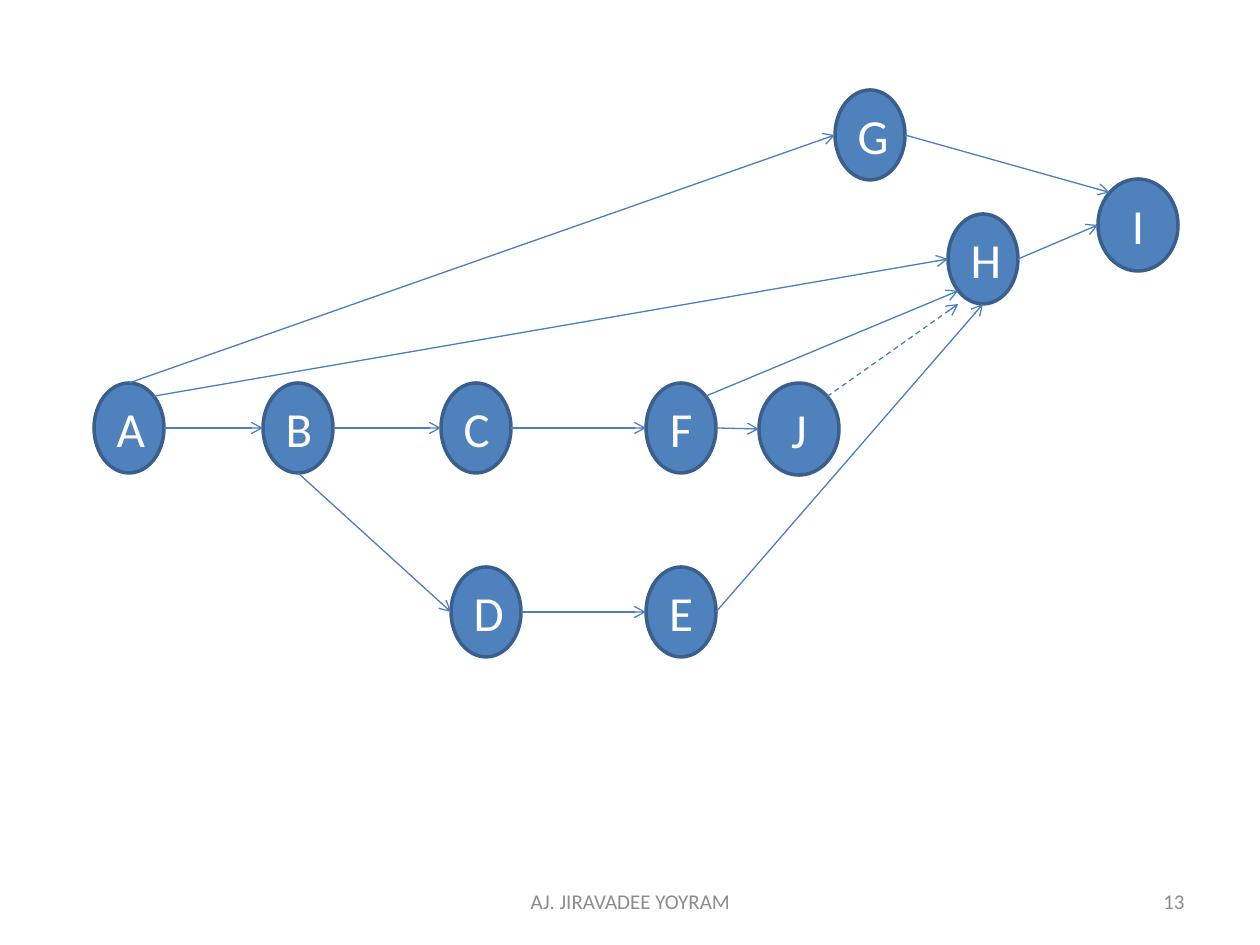
from dataclasses import dataclass
from math import cos, pi, sin

from lxml import etree
from pptx import Presentation
from pptx.dml.color import RGBColor
from pptx.enum.dml import MSO_LINE
from pptx.enum.shapes import MSO_CONNECTOR, MSO_SHAPE
from pptx.enum.text import MSO_ANCHOR, PP_ALIGN
from pptx.oxml.ns import qn
from pptx.util import Pt

STRAIGHT = MSO_CONNECTOR.STRAIGHT
OVAL = MSO_SHAPE.OVAL
DASH = MSO_LINE.DASH
MIDDLE = MSO_ANCHOR.MIDDLE
CENTER = PP_ALIGN.CENTER
RIGHT = PP_ALIGN.RIGHT

PX = 914400 / 126


@dataclass(frozen=True)
class Theme:
    font: str = "Calibri"
    node_fill: str = "4F81BD"
    node_line: str = "3A5F8C"
    node_text: str = "FFFFFF"
    arrow: str = "4B7EBC"
    footer_text: str = "8C8C8C"
    node_size: float = 28
    footer_size: float = 12
    node_line_width: float = 2
    arrow_width: float = 0.75


THEME = Theme()

SMALL = (70, 90)
LARGE = (80, 92)
MAIN_ROW = 293
LOWER_ROW = 477
ACTIVITIES = {
    "A": (0, MAIN_ROW, *SMALL),
    "B": (169, MAIN_ROW, *SMALL),
    "C": (347, MAIN_ROW, *SMALL),
    "D": (357, LOWER_ROW, *SMALL),
    "E": (552, LOWER_ROW, *SMALL),
    "F": (552, MAIN_ROW, *SMALL),
    "G": (741, 0, *SMALL),
    "H": (854, 124, *SMALL),
    "I": (1004, 89, *LARGE),
    "J": (665, MAIN_ROW, *LARGE),
}

TOP, TOP_LEFT, LEFT, BOTTOM_LEFT, BOTTOM, _, RIGHT_SIDE, TOP_RIGHT = range(8)
DEPENDENCIES = [
    ("A", RIGHT_SIDE, "B", LEFT),
    ("B", RIGHT_SIDE, "C", LEFT),
    ("B", BOTTOM, "D", LEFT),
    ("D", RIGHT_SIDE, "E", LEFT),
    ("C", RIGHT_SIDE, "F", LEFT),
    ("A", TOP, "G", LEFT),
    ("A", TOP_RIGHT, "H", LEFT),
    ("E", RIGHT_SIDE, "H", BOTTOM),
    ("F", TOP_RIGHT, "H", BOTTOM_LEFT),
    ("G", RIGHT_SIDE, "I", TOP_LEFT),
    ("H", RIGHT_SIDE, "I", LEFT),
    ("F", RIGHT_SIDE, "J", LEFT),
]


def emu(*lengths):
    return [round(length * PX) for length in lengths]


def write(shape, text, size, color, alignment):
    frame = shape.text_frame
    frame.word_wrap = True
    frame.vertical_anchor = MIDDLE
    paragraph = frame.paragraphs[0]
    paragraph.alignment = alignment
    run = paragraph.add_run()
    run.text = text
    run.font.name = THEME.font
    run.font.size = Pt(size)
    run.font.color.rgb = RGBColor.from_string(color)


def add_activity(slide, name, box):
    shape = slide.shapes.add_shape(OVAL, *emu(*box))
    shape.shadow.inherit = False
    shape.fill.solid()
    shape.fill.fore_color.rgb = RGBColor.from_string(THEME.node_fill)
    shape.line.color.rgb = RGBColor.from_string(THEME.node_line)
    shape.line.width = Pt(THEME.node_line_width)
    write(shape, name, THEME.node_size, THEME.node_text, CENTER)
    return shape


def site_point(shape, site):
    angle = site * pi / 4
    x = shape.left + shape.width / 2 * (1 - sin(angle))
    y = shape.top + shape.height / 2 * (1 - cos(angle))
    return round(x), round(y)


def add_arrow(slide, start, end, dash=None):
    connector = slide.shapes.add_connector(STRAIGHT, *start, *end)
    connector.line.color.rgb = RGBColor.from_string(THEME.arrow)
    connector.line.width = Pt(THEME.arrow_width)
    if dash:
        connector.line.dash_style = dash
    properties = connector._element.spPr
    etree.SubElement(properties.find(qn("a:ln")), qn("a:tailEnd"), type="arrow")
    etree.SubElement(properties, qn("a:effectLst"))
    return connector


def glue(connector, tag, shape, site):
    joints = connector._element.find(f"{qn('p:nvCxnSpPr')}/{qn('p:cNvCxnSpPr')}")
    etree.SubElement(joints, qn(tag), id=str(shape.shape_id), idx=str(site))


def add_network(slide, left, top):
    nodes = {
        name: add_activity(slide, name, (left + x, top + y, width, height))
        for name, (x, y, width, height) in ACTIVITIES.items()
    }
    for source, source_site, target, target_site in DEPENDENCIES:
        first, last = nodes[source], nodes[target]
        arrow = add_arrow(slide, site_point(first, source_site), site_point(last, target_site))
        glue(arrow, "a:stCxn", first, source_site)
        glue(arrow, "a:endCxn", last, target_site)

    corner_x = site_point(nodes["H"], BOTTOM_LEFT)[0]
    bottom_y = site_point(nodes["H"], BOTTOM)[1]
    dummy = add_arrow(slide, site_point(nodes["J"], TOP_RIGHT), (corner_x, bottom_y), DASH)
    glue(dummy, "a:stCxn", nodes["J"], TOP_RIGHT)


def add_footer(slide, left, top, width, height):
    number_width = 294
    entries = [
        ("AJ. JIRAVADEE YOYRAM", left, 399, CENTER),
        ("13", left + width - number_width, number_width, RIGHT),
    ]
    for text, x, text_width, alignment in entries:
        shape = slide.shapes.add_textbox(*emu(x, top, text_width, height))
        write(shape, text, THEME.footer_size, THEME.footer_text, alignment)


def main():
    presentation = Presentation()
    presentation.slide_width, presentation.slide_height = emu(1260, 945)
    slide = presentation.slides.add_slide(presentation.slide_layouts[6])
    add_footer(slide, 431, 876, 766, 50)
    add_network(slide, 94, 90)
    presentation.save("out.pptx")


if __name__ == "__main__":
    main()
